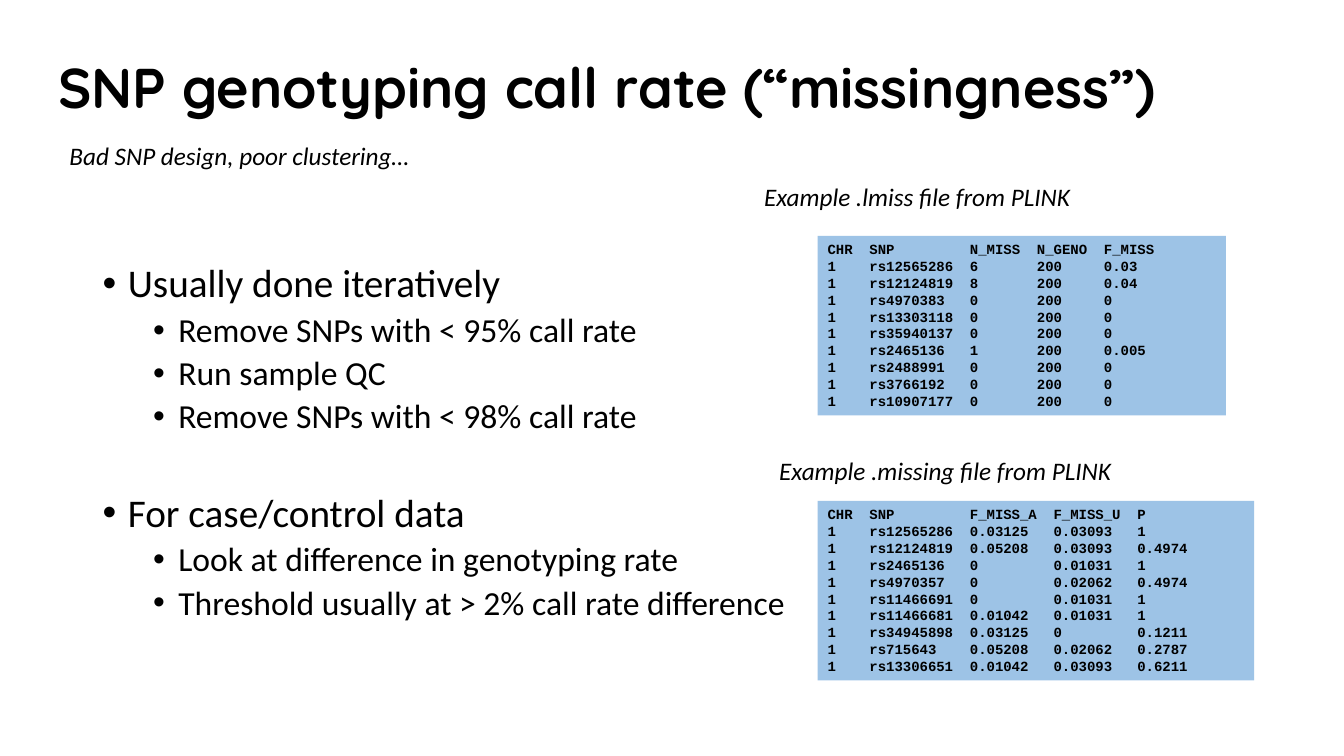
from dataclasses import dataclass

from lxml.etree import SubElement
from pptx import Presentation
from pptx.dml.color import RGBColor
from pptx.enum.shapes import MSO_SHAPE
from pptx.enum.text import MSO_ANCHOR, MSO_AUTO_SIZE, PP_ALIGN
from pptx.oxml.ns import qn
from pptx.util import Inches, Pt


@dataclass(frozen=True)
class Theme:
    ink: RGBColor = RGBColor(0x00, 0x00, 0x00)
    panel: RGBColor = RGBColor(0x9D, 0xC3, 0xE6)
    heading_font: str = "Quicksand"
    body_font: str = "Calibri"
    code_font: str = "Courier New"
    title_size: int = 40
    topic_size: int = 28
    step_size: int = 24
    caption_size: int = 18
    code_size: int = 10


THEME = Theme()

TOPICS = [
    ("Usually done iteratively", [
        "Remove SNPs with < 95% call rate",
        "Run sample QC",
        "Remove SNPs with < 98% call rate",
    ]),
    ("For case/control data", [
        "Look at difference in genotyping rate",
        "Threshold usually at > 2% call rate difference",
    ]),
]

LMISS_ROWS = [
    ("CHR", "SNP", "N_MISS", "N_GENO", "F_MISS"),
    ("1", "rs12565286", "6", "200", "0.03"),
    ("1", "rs12124819", "8", "200", "0.04"),
    ("1", "rs4970383", "0", "200", "0"),
    ("1", "rs13303118", "0", "200", "0"),
    ("1", "rs35940137", "0", "200", "0"),
    ("1", "rs2465136", "1", "200", "0.005"),
    ("1", "rs2488991", "0", "200", "0"),
    ("1", "rs3766192", "0", "200", "0"),
    ("1", "rs10907177", "0", "200", "0"),
]

MISSING_ROWS = [
    ("CHR", "SNP", "F_MISS_A", "F_MISS_U", "P"),
    ("1", "rs12565286", "0.03125", "0.03093", "1"),
    ("1", "rs12124819", "0.05208", "0.03093", "0.4974"),
    ("1", "rs2465136", "0", "0.01031", "1"),
    ("1", "rs4970357", "0", "0.02062", "0.4974"),
    ("1", "rs11466691", "0", "0.01031", "1"),
    ("1", "rs11466681", "0.01042", "0.01031", "1"),
    ("1", "rs34945898", "0.03125", "0", "0.1211"),
    ("1", "rs715643", "0.05208", "0.02062", "0.2787"),
    ("1", "rs13306651", "0.01042", "0.03093", "0.6211"),
]


def format_runs(paragraph, font_name, size, bold=False, italic=False):
    for run in paragraph.runs:
        run.font.name = font_name
        run.font.size = Pt(size)
        run.font.bold = bold
        run.font.italic = italic
        run.font.color.rgb = THEME.ink


def set_title(slide, wording):
    title = slide.shapes.title
    title.left, title.top = Inches(0.48), Inches(0.17)
    title.width, title.height = Inches(11.79), Inches(1.45)
    frame = title.text_frame
    frame.text = wording
    frame.auto_size = MSO_AUTO_SIZE.NONE
    frame.vertical_anchor = MSO_ANCHOR.MIDDLE
    heading = frame.paragraphs[0]
    heading.alignment = PP_ALIGN.LEFT
    heading.line_spacing = 0.9
    format_runs(heading, THEME.heading_font, THEME.title_size, bold=True)


def add_caption(slide, left, top, width, wording):
    caption = slide.shapes.add_textbox(Inches(left), Inches(top), Inches(width), Inches(0.4))
    frame = caption.text_frame
    frame.text = wording
    frame.word_wrap = False
    format_runs(frame.paragraphs[0], THEME.body_font, THEME.caption_size, italic=True)


def add_bullet(paragraph, wording, level, size, space_before):
    paragraph.text = wording
    paragraph.level = level
    properties = paragraph._p.get_or_add_pPr()
    properties.set("marL", str(Inches(0.25 + 0.5 * level)))
    properties.set("indent", str(Inches(-0.25)))
    SubElement(properties, qn("a:buFont"), typeface="Arial")
    SubElement(properties, qn("a:buChar"), char="•")
    paragraph.line_spacing = 0.9
    paragraph.space_before = Pt(space_before)
    format_runs(paragraph, THEME.body_font, size)


def add_topics(slide, topics):
    outline = slide.shapes.add_textbox(Inches(0.92), Inches(2.57), Inches(7.15), Inches(4.19))
    frame = outline.text_frame
    frame.word_wrap = True
    for number, (topic, steps) in enumerate(topics):
        paragraph = frame.add_paragraph() if number else frame.paragraphs[0]
        add_bullet(paragraph, topic, 0, THEME.topic_size, 41 if number else 0)
        for step in steps:
            add_bullet(frame.add_paragraph(), step, 1, THEME.step_size, 5)


def align_columns(rows):
    widths = [max(map(len, column)) + 2 for column in zip(*rows)]
    return "\n".join(
        "".join(value.ljust(width) for value, width in zip(row, widths)).rstrip()
        for row in rows
    )


def add_file_listing(slide, top, width, rows):
    listing = slide.shapes.add_shape(
        MSO_SHAPE.RECTANGLE, Inches(8.11), Inches(top), Inches(width), Inches(1.78))
    listing.shadow.inherit = False
    listing.fill.solid()
    listing.fill.fore_color.rgb = THEME.panel
    listing.line.fill.background()
    frame = listing.text_frame
    frame.text = align_columns(rows)
    frame.word_wrap = True
    frame.vertical_anchor = MSO_ANCHOR.TOP
    for paragraph in frame.paragraphs:
        paragraph.alignment = PP_ALIGN.LEFT
        format_runs(paragraph, THEME.code_font, THEME.code_size, bold=True)


def main():
    presentation = Presentation()
    presentation.slide_width = Inches(13.33)
    presentation.slide_height = Inches(7.5)
    slide = presentation.slides.add_slide(presentation.slide_layouts.get_by_name("Title Only"))
    set_title(slide, "SNP genotyping call rate (“missingness”)")
    add_topics(slide, TOPICS)
    add_file_listing(slide, 2.34, 4.05, LMISS_ROWS)
    add_caption(slide, 7.48, 1.75, 3.29, "Example .lmiss file from PLINK")
    add_file_listing(slide, 4.97, 4.33, MISSING_ROWS)
    add_caption(slide, 7.63, 4.47, 3.53, "Example .missing file from PLINK")
    add_caption(slide, 0.59, 1.34, 3.64, "Bad SNP design, poor clustering…")
    presentation.save("out.pptx")


if __name__ == "__main__":
    main()
